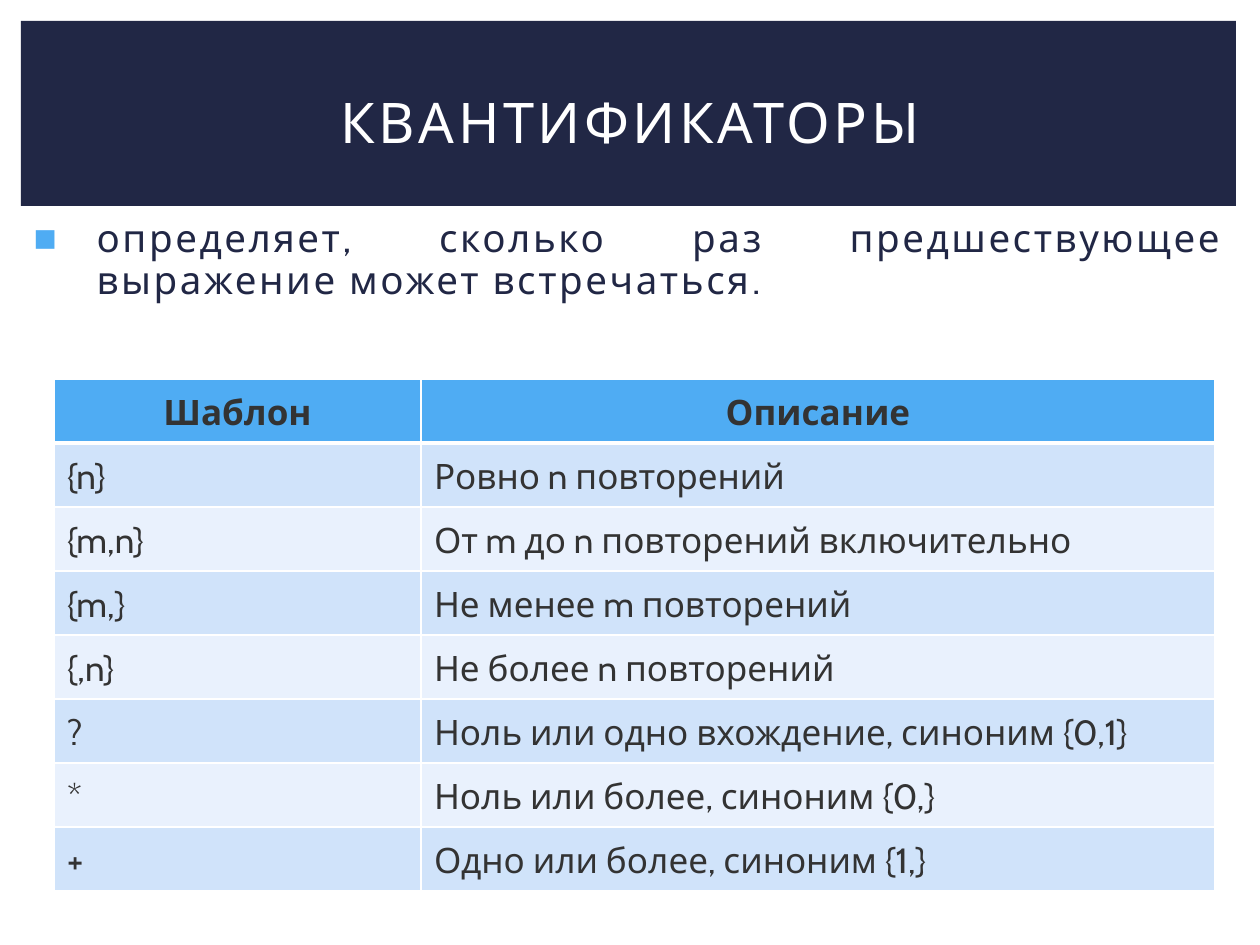
from dataclasses import dataclass

from lxml.etree import SubElement
from pptx import Presentation
from pptx.dml.color import RGBColor
from pptx.enum.shapes import MSO_SHAPE
from pptx.enum.text import MSO_ANCHOR, MSO_AUTO_SIZE, PP_ALIGN
from pptx.oxml.ns import qn
from pptx.util import Emu, Pt


@dataclass(frozen=True)
class Theme:
    font: str = "Cabin"
    navy: str = "212745"
    blue: str = "4FACF3"
    white: str = "FFFFFF"
    ink: str = "333333"
    bands: tuple = ("D0E3FA", "E9F1FD")
    title_size: int = 32
    body_size: int = 22
    table_size: int = 20


THEME = Theme()

QUANTIFIERS = [
    ("Шаблон", "Описание"),
    ("{n}", "Ровно n повторений"),
    ("{m,n}", "От m до n повторений включительно"),
    ("{m,}", "Не менее m повторений"),
    ("{,n}", "Не более n повторений"),
    ("?", "Ноль или одно вхождение, синоним {0,1}"),
    ("*", "Ноль или более, синоним {0,}"),
    ("+", "Одно или более, синоним {1,}"),
]


def px(length):
    """Turn pixels, 126 to the inch, into EMU."""
    return Emu(round(length * 914400 / 126))


def rgb(color):
    return RGBColor.from_string(color)


def place(shape, left, top, width, height):
    shape.left, shape.top = px(left), px(top)
    shape.width, shape.height = px(width), px(height)


def add_run(paragraph, text, size, color, bold=False, spacing=0):
    run = paragraph.add_run()
    run.text = text
    run.font.name = THEME.font
    run.font.size = Pt(size)
    run.font.bold = bold
    run.font.color.rgb = rgb(color)
    if spacing:
        run.font._element.set("spc", str(round(spacing * 100)))


def add_banner(slide):
    banner = slide.shapes.add_shape(
        MSO_SHAPE.RECTANGLE, px(21), px(21), px(1215), px(185))
    banner.shadow.inherit = False
    banner.fill.solid()
    banner.fill.fore_color.rgb = rgb(THEME.navy)
    banner.line.fill.background()
    # Behind the placeholders
    slide.shapes._spTree.insert(2, banner._element)


def fill_title(title, text):
    place(title, 53, 49, 1155, 145)
    frame = title.text_frame
    frame.auto_size = MSO_AUTO_SIZE.NONE
    frame.vertical_anchor = MSO_ANCHOR.MIDDLE
    heading = frame.paragraphs[0]
    heading.alignment = PP_ALIGN.CENTER
    add_run(heading, text, THEME.title_size, THEME.white, spacing=2)


def set_bullet(paragraph, char, color, indent, hanging):
    props = paragraph._p.get_or_add_pPr()
    props.set("marL", str(px(indent)))
    props.set("indent", str(-px(hanging)))
    bullet_color = SubElement(props, qn("a:buClr"))
    SubElement(bullet_color, qn("a:srgbClr")).set("val", color)
    SubElement(props, qn("a:buChar")).set("char", char)


def fill_definition(body, text):
    place(body, 15, 213, 1221, 111)
    frame = body.text_frame
    frame.auto_size = MSO_AUTO_SIZE.NONE
    definition = frame.paragraphs[0]
    definition.alignment = PP_ALIGN.JUSTIFY
    definition.line_spacing = 0.9
    set_bullet(definition, "■", THEME.blue, indent=69, hanging=63)
    add_run(definition, text, THEME.body_size, THEME.navy, spacing=1.5)


def set_borders(cell, color, **widths):
    props = cell._tc.get_or_add_tcPr()
    for side, width in widths.items():
        border = SubElement(props, qn(f"a:ln{side}"))
        border.set("w", str(Pt(width)))
        solid = SubElement(border, qn("a:solidFill"))
        SubElement(solid, qn("a:srgbClr")).set("val", color)


def fill_cell(cell, text, row):
    is_header = row == 0
    set_borders(cell, THEME.white, L=1, R=1,
                T=3 if row == 1 else 1, B=3 if is_header else 1)
    cell.fill.solid()
    cell.fill.fore_color.rgb = rgb(
        THEME.blue if is_header else THEME.bands[(row - 1) % 2])
    cell.margin_left = cell.margin_right = px(13)
    cell.margin_top, cell.margin_bottom = px(6), px(9)

    entry = cell.text_frame.paragraphs[0]
    entry.alignment = PP_ALIGN.CENTER if is_header else PP_ALIGN.LEFT
    entry.line_spacing = 1.15
    entry.space_before = entry.space_after = Pt(18)
    add_run(entry, text, THEME.table_size, THEME.ink, bold=is_header)


def add_quantifier_table(slide, entries):
    widths, row_height = (367, 794), 52
    table = slide.shapes.add_table(
        len(entries), len(widths), px(54), px(379),
        px(sum(widths)), px(row_height * len(entries))).table
    for column, width in zip(table.columns, widths):
        column.width = px(width)
    for row, texts in enumerate(entries):
        table.rows[row].height = px(row_height)
        for column, text in enumerate(texts):
            fill_cell(table.cell(row, column), text, row)


def main():
    deck = Presentation()
    deck.slide_width, deck.slide_height = px(1260), px(945)
    slide = deck.slides.add_slide(deck.slide_layouts[1])

    # Heading
    add_banner(slide)
    fill_title(slide.shapes.title, "КВАНТИФИКАТОРЫ")

    # Definition
    fill_definition(
        slide.placeholders[1],
        "определяет, сколько раз предшествующее выражение может встречаться.")

    # Table of patterns
    add_quantifier_table(slide, QUANTIFIERS)

    deck.save("out.pptx")


if __name__ == "__main__":
    main()
